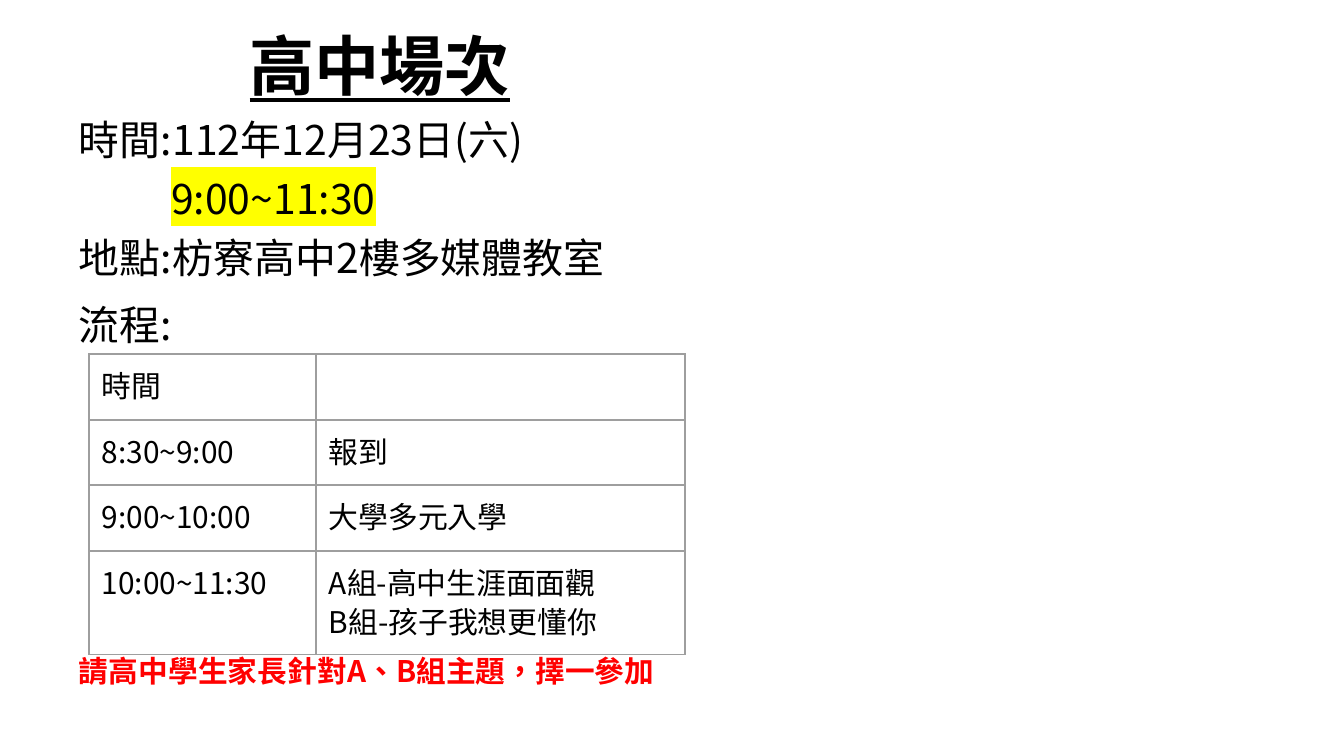
from lxml import etree
from pptx import Presentation
from pptx.dml.color import RGBColor
from pptx.enum.text import MSO_ANCHOR, MSO_AUTO_SIZE, PP_ALIGN
from pptx.oxml.ns import qn
from pptx.util import Pt

PX = 914400 / 134.4
FONT = "Noto Sans CJK TC"
BLACK = RGBColor(0, 0, 0)
RED = RGBColor(255, 0, 0)
YELLOW = RGBColor(255, 255, 0)
GREY = RGBColor(0x9E, 0x9E, 0x9E)
TOP = MSO_ANCHOR.TOP
FIXED = MSO_AUTO_SIZE.NONE
LEFT, CENTER = PP_ALIGN.LEFT, PP_ALIGN.CENTER
PAD = 13
CELL_SIZE = 16

# text, size, colour, bold, line spacing, space before, indent in px
LINES = [
    ("時間:112年12月23日(六)", 21.9, BLACK, False, 0.9, 0, 0),
    ("9:00~11:30", 21.9, BLACK, False, 0.9, 8, 92),
    ("地點:枋寮高中2樓多媒體教室", 21.9, BLACK, False, 0.9, 8, 0),
    ("流程:", 21.9, BLACK, False, 1.05, 8, 0),
    ("請高中學生家長針對A、B組主題，擇一參加", 15.9, RED, True, 1.05, 162, 0),
]
ROWS = [
    ("時間", ""),
    ("8:30~9:00", "報到"),
    ("9:00~10:00", "大學多元入學"),
    ("10:00~11:30", "A組-高中生涯面面觀\nB組-孩子我想更懂你"),
]
COLS = (227, 369)
HEIGHTS = (66, 65, 66, 104)


def px(n):
    return round(n * PX)


def add_color(parent, color):
    etree.SubElement(parent, qn("a:srgbClr"), val=str(color))


def style(para, size, color=BLACK, bold=False, gap=0.9):
    para.line_spacing = gap
    for run in para.runs:
        font = run.font
        font.size, font.bold, font.name = Pt(size), bold, FONT
        font.color.rgb = color
        props = run._r.get_or_add_rPr()
        props.set("lang", "zh-TW")
        etree.SubElement(props, qn("a:ea"), typeface=FONT)


def mark(run, color):
    """Highlight a run whose font colour is already set."""
    light = etree.Element(qn("a:highlight"))
    add_color(light, color)
    run._r.rPr.find(qn("a:solidFill")).addnext(light)


def place(shape, x, y, w, h):
    """Move a placeholder and return its text frame, set to plain flow."""
    shape.left, shape.top, shape.width, shape.height = map(px, (x, y, w, h))
    frame = shape.text_frame
    frame.word_wrap, frame.auto_size = True, FIXED
    frame.vertical_anchor = TOP
    frame.margin_left = frame.margin_right = px(PAD)
    frame.margin_top = frame.margin_bottom = 0
    return frame


def fill_title(shape):
    frame = place(shape, 66, 21, 628, 89)
    frame.text = "高中場次"
    para = frame.paragraphs[0]
    para.alignment = CENTER
    style(para, 34.9, bold=True, gap=1.05)
    para.runs[0].font.underline = True


def fill_body(shape):
    frame = place(shape, 66, 120, 628, 616)
    frame.text = "\n".join(line[0] for line in LINES)
    for para, line in zip(frame.paragraphs, LINES):
        _, size, color, bold, gap, before, indent = line
        para.alignment = LEFT
        para.space_before = Pt(before)
        style(para, size, color, bold, gap)
        props = para._p.get_or_add_pPr()
        props.set("marL", str(px(indent)))
        props.set("indent", "0")
        etree.SubElement(props, qn("a:buNone"))
    mark(frame.paragraphs[1].runs[0], YELLOW)


def add_border(cell):
    props = cell._tc.get_or_add_tcPr()
    for side in ("lnL", "lnR", "lnT", "lnB"):
        line = etree.SubElement(props, qn("a:" + side), w=str(Pt(0.75)))
        add_color(etree.SubElement(line, qn("a:solidFill")), GREY)


def fill_cell(cell, text):
    cell.text = text
    cell.margin_left = cell.margin_right = px(PAD)
    cell.margin_top = cell.margin_bottom = px(PAD)
    add_border(cell)
    cell.fill.background()
    for para in cell.text_frame.paragraphs:
        style(para, CELL_SIZE)
        if not text:
            end = para._p.get_or_add_endParaRPr()
            end.set("sz", str(CELL_SIZE * 100))


def add_plan(slide):
    frame = slide.shapes.add_table(
        len(ROWS), len(COLS), px(89), px(354), px(sum(COLS)), px(sum(HEIGHTS)))
    table = frame.table
    table.first_row = table.horz_banding = False
    for col, width in zip(table.columns, COLS):
        col.width = px(width)
    for row, height, texts in zip(table.rows, HEIGHTS, ROWS):
        row.height = px(height)
        for cell, text in zip(row.cells, texts):
            fill_cell(cell, text)


def main():
    deck = Presentation()
    deck.slide_width, deck.slide_height = px(1344), px(756)
    slide = deck.slides.add_slide(deck.slide_layouts[1])
    fill_title(slide.shapes.title)
    fill_body(slide.placeholders[1])
    add_plan(slide)
    deck.save("out.pptx")


if __name__ == "__main__":
    main()
